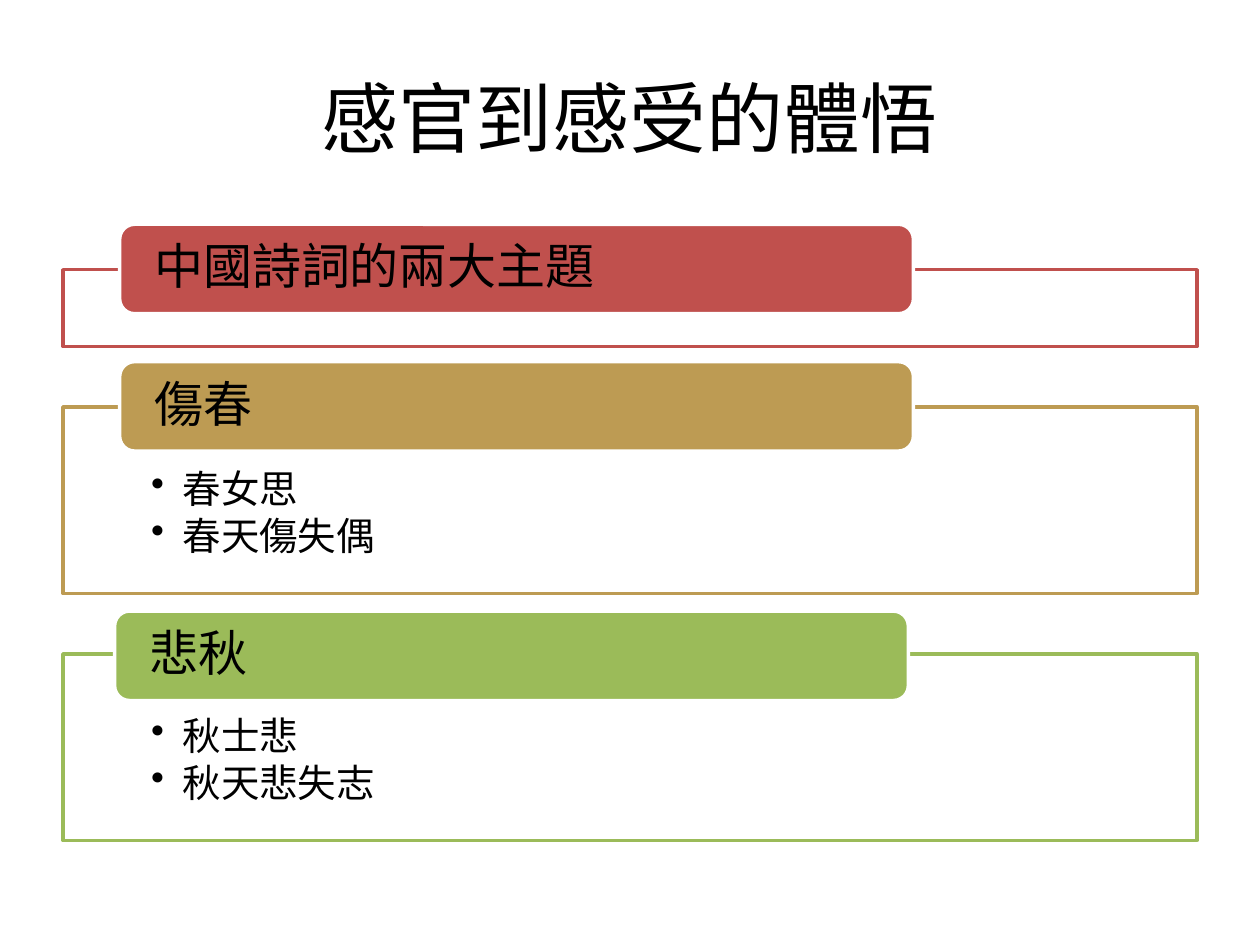
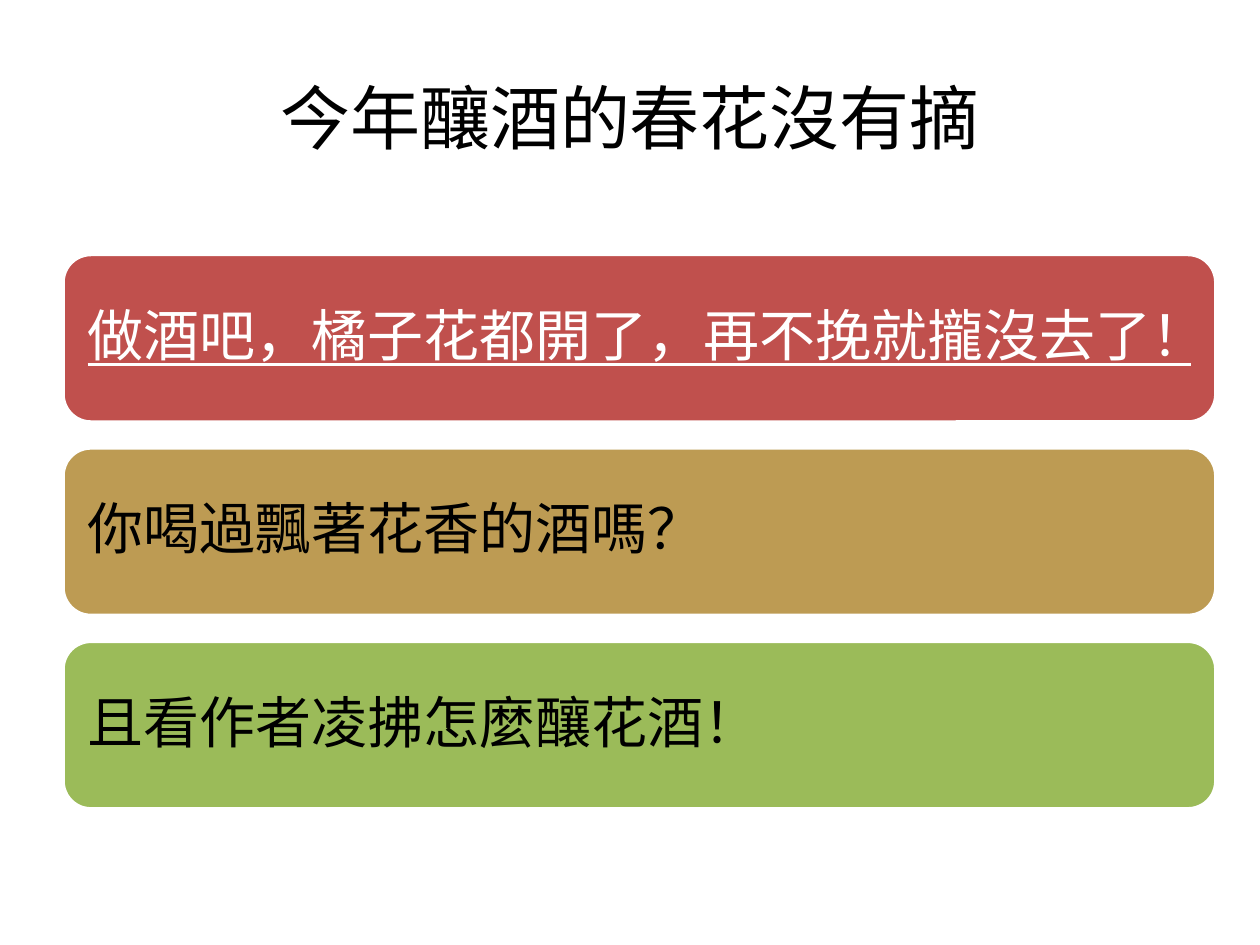
from dataclasses import dataclass

from lxml import etree
from pptx import Presentation
from pptx.dml.color import RGBColor
from pptx.enum.shapes import MSO_SHAPE
from pptx.enum.text import MSO_ANCHOR, PP_ALIGN
from pptx.oxml.ns import qn
from pptx.util import Inches, Pt

RECTANGLE = MSO_SHAPE.RECTANGLE
ROUNDED = MSO_SHAPE.ROUNDED_RECTANGLE
TOP, MIDDLE = MSO_ANCHOR.TOP, MSO_ANCHOR.MIDDLE
LEFT, CENTER = PP_ALIGN.LEFT, PP_ALIGN.CENTER
TITLE_ONLY = 5


@dataclass(frozen=True)
class Theme:
    black: RGBColor = RGBColor(0x00, 0x00, 0x00)
    white: RGBColor = RGBColor(0xFF, 0xFF, 0xFF)
    red: RGBColor = RGBColor(0xC0, 0x50, 0x4D)
    gold: RGBColor = RGBColor(0xBD, 0x9B, 0x53)
    green: RGBColor = RGBColor(0x9B, 0xBB, 0x59)
    latin_font: str = "Calibri"
    chinese_font: str = "Noto Sans CJK SC"
    theme_title_size: int = 44
    poem_title_size: int = 40
    band_size: int = 32
    heading_size: int = 28
    bullet_size: int = 22
    line_width: int = 2


THEME = Theme()


def add_run(paragraph, text, font_name, size, color, underline=None):
    run = paragraph.add_run()
    run.text = text
    font = run.font
    font.name = font_name
    font.size = Pt(size)
    font.color.rgb = color
    font.underline = underline
    if font_name == THEME.chinese_font:
        latin = run._r.rPr.find(qn("a:latin"))
        east_asian = etree.Element(qn("a:ea"), typeface=font_name)
        latin.addnext(east_asian)


def add_titled_slide(presentation, text, font_name, size):
    slide = presentation.slides.add_slide(presentation.slide_layouts[TITLE_ONLY])
    title = slide.shapes.title
    title.left, title.top = Inches(0.5), Inches(0.3)
    title.width, title.height = Inches(9), Inches(1.25)
    title.text_frame.vertical_anchor = MIDDLE
    paragraph = title.text_frame.paragraphs[0]
    paragraph.alignment = CENTER
    add_run(paragraph, text, font_name, size, THEME.black)
    return slide


def add_box(slide, preset, position, fill, line, anchor, margins):
    """Add a filled shape; position and margins run left, top, then the rest."""
    shape = slide.shapes.add_shape(preset, *map(Inches, position))
    shape.shadow.inherit = False
    shape.fill.solid()
    shape.fill.fore_color.rgb = fill
    shape.line.color.rgb = line
    shape.line.width = Pt(THEME.line_width)
    frame = shape.text_frame
    frame.word_wrap = True
    frame.vertical_anchor = anchor
    (frame.margin_left, frame.margin_top,
     frame.margin_right, frame.margin_bottom) = map(Inches, margins)
    frame.paragraphs[0].alignment = LEFT
    frame.paragraphs[0].line_spacing = 0.9
    return shape


def add_bullets(shape, items):
    frame = shape.text_frame
    for index, item in enumerate(items):
        paragraph = frame.add_paragraph() if index else frame.paragraphs[0]
        properties = paragraph._p.get_or_add_pPr()
        properties.set("marL", str(Inches(0.25)))
        properties.set("indent", str(-Inches(0.25)))
        etree.SubElement(properties, qn("a:buChar"), char="•")
        paragraph.alignment = LEFT
        paragraph.line_spacing = 0.9
        paragraph.space_after = Pt(3.3)
        add_run(paragraph, item, THEME.latin_font, THEME.bullet_size, THEME.black)


def add_section(slide, frame_top, frame_height, tab_position, color, heading, items):
    """Add an outlined frame of bullets with a coloured heading tab on its top edge."""
    frame = add_box(slide, RECTANGLE, (0.5, frame_top, 9, frame_height),
                    THEME.white, color, TOP, (0.7, 0.5, 0.7, 0.17))
    add_bullets(frame, items)
    tab = add_box(slide, ROUNDED, (*tab_position, 6.3, 0.71),
                  color, THEME.white, MIDDLE, (0.24, 0, 0.24, 0))
    add_run(tab.text_frame.paragraphs[0], heading, THEME.latin_font,
            THEME.heading_size, THEME.black)


def add_band(slide, top, color, text, text_color, underline):
    band = add_box(slide, ROUNDED, (0.5, top, 9.15, 1.33),
                   color, THEME.white, MIDDLE, (0.13,) * 4)
    add_run(band.text_frame.paragraphs[0], text, THEME.chinese_font,
            THEME.band_size, text_color, underline)


def build_themes_slide(presentation):
    slide = add_titled_slide(presentation, "感官到感受的體悟",
                             THEME.latin_font, THEME.theme_title_size)
    sections = [
        (2.14, 0.61, (0.95, 1.78), THEME.red, "中國詩詞的兩大主題", []),
        (3.23, 1.48, (0.95, 2.87), THEME.gold, "傷春", ["春女思", "春天傷失偶"]),
        (5.19, 1.48, (0.91, 4.85), THEME.green, "悲秋", ["秋士悲", "秋天悲失志"]),
    ]
    for section in sections:
        add_section(slide, *section)


def build_wine_slide(presentation):
    slide = add_titled_slide(presentation, "今年釀酒的春花沒有摘",
                             THEME.chinese_font, THEME.poem_title_size)
    bands = [
        (THEME.red, "做酒吧，橘子花都開了，再不挽就攏沒去了！", THEME.white, True),
        (THEME.gold, "你喝過飄著花香的酒嗎？", THEME.black, None),
        (THEME.green, "且看作者凌拂怎麼釀花酒！", THEME.black, None),
    ]
    first_top, pitch = 2.02, 1.535
    for index, band in enumerate(bands):
        add_band(slide, first_top + index * pitch, *band)


def main():
    presentation = Presentation()
    presentation.slide_width = Inches(10)
    presentation.slide_height = Inches(7.5)
    build_themes_slide(presentation)
    build_wine_slide(presentation)
    presentation.save("out.pptx")


if __name__ == "__main__":
    main()
